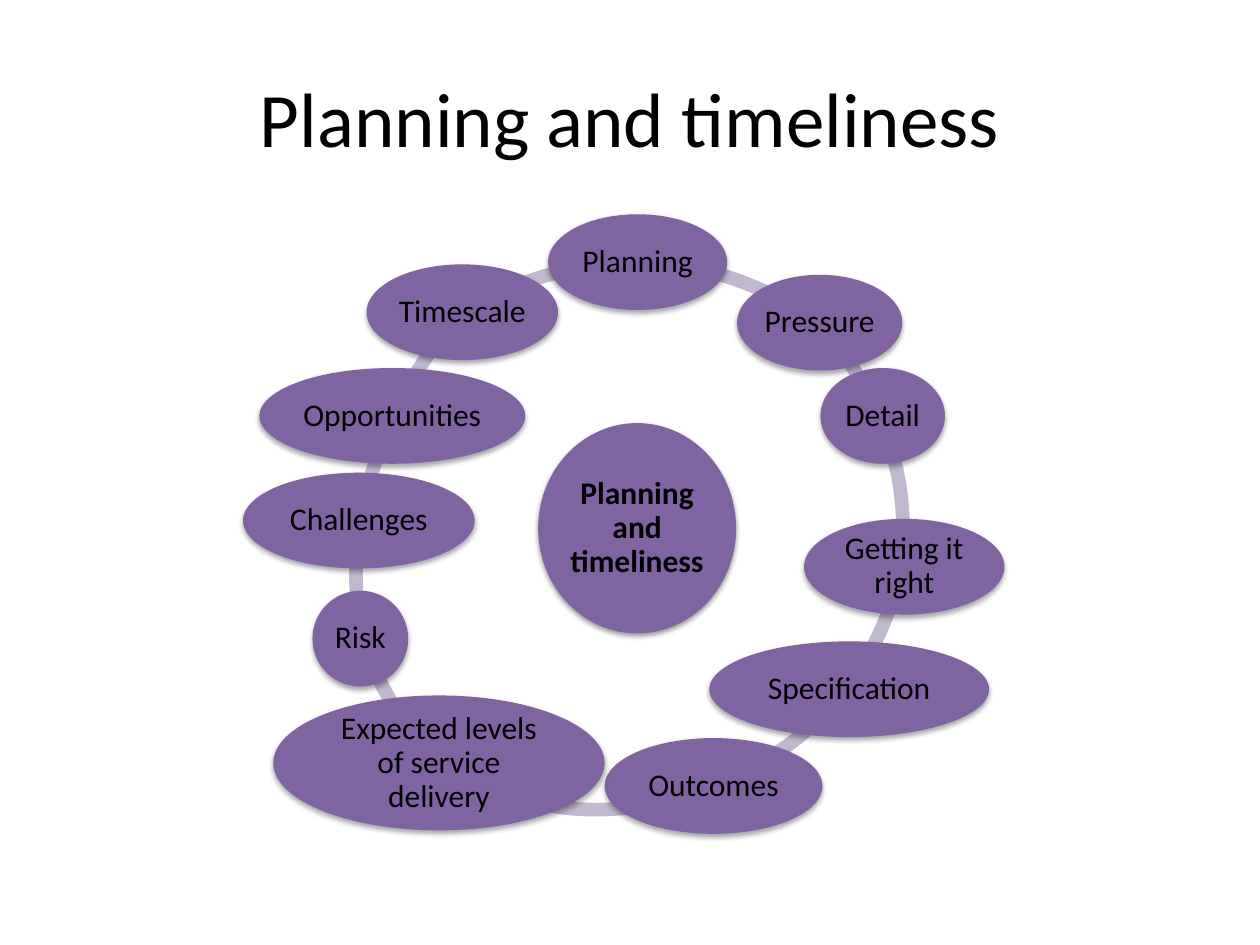
from dataclasses import dataclass
from typing import Any

from lxml import etree
from pptx import Presentation
from pptx.dml.color import RGBColor
from pptx.enum.shapes import MSO_SHAPE
from pptx.enum.text import MSO_ANCHOR, PP_ALIGN
from pptx.oxml.ns import qn
from pptx.util import Cm, Pt

ELLIPSE = MSO_SHAPE.OVAL
BLOCK_ARC = MSO_SHAPE.BLOCK_ARC
CENTER = PP_ALIGN.CENTER
MIDDLE = MSO_ANCHOR.MIDDLE

TITLE_ONLY = 5
RING_DIAMETER = 11
RING_THICKNESS = 0.025
TOPIC_HEIGHT = 1.93

# Ring segments: left, top (cm), start and end angle (degrees, clockwise)
RING = [
    (6.99, 5.21, 234.44, 273.99),
    (7.49, 4.78, 200.36, 227.24),
    (7.14, 5.56, 186.23, 209.69),
    (7.04, 6.12, 166.53, 192.06),
    (6.96, 5.84, 131.96, 163.53),
    (6.5, 5.46, 64, 125.63),
    (7.24, 5.18, 36.23, 72.41),
    (7.37, 5, 9.68, 38.55),
    (7.34, 5.13, 335.46, 8.18),
    (7.24, 4.9, 313.87, 338.2),
    (7.59, 5.21, 267.36, 308.92),
]

# Topics clockwise from the top: text, left, top, width, height (cm)
TOPICS = [
    ("Planning", 11.05, 4.32, 3.61, TOPIC_HEIGHT),
    ("Pressure", 14.86, 5.54, 3.33, TOPIC_HEIGHT),
    ("Detail", 16.54, 7.42, 2.51, TOPIC_HEIGHT),
    ("Getting it right", 16.21, 10.46, 4.04, TOPIC_HEIGHT),
    ("Specification", 14.3, 12.93, 5.64, TOPIC_HEIGHT),
    ("Outcomes", 12.19, 14.88, 4.39, TOPIC_HEIGHT),
    ("Expected levels of service delivery", 5.51, 14.02, 6.68, 2.72),
    ("Risk", 6.3, 11.91, 1.93, TOPIC_HEIGHT),
    ("Challenges", 4.9, 9.53, 4.67, TOPIC_HEIGHT),
    ("Opportunities", 5.23, 7.42, 5.36, TOPIC_HEIGHT),
    ("Timescale", 7.39, 5.33, 3.86, TOPIC_HEIGHT),
]


def color(value):
    return RGBColor.from_string(value)


def write_text(frame, text, *, font, size, fill, bold=False, line_spacing=None,
               space_after=None, margin=None):
    frame.word_wrap = True
    frame.vertical_anchor = MIDDLE
    if margin is not None:
        frame.margin_left = frame.margin_right = Cm(margin)
        frame.margin_top = frame.margin_bottom = Cm(margin)
    paragraph = frame.paragraphs[0]
    paragraph.alignment = CENTER
    if line_spacing is not None:
        paragraph.line_spacing = line_spacing
    if space_after is not None:
        paragraph.space_after = Pt(space_after)
    run = paragraph.add_run()
    run.text = text
    run.font.name = font
    run.font.size = Pt(size)
    run.font.bold = bold
    run.font.color.rgb = color(fill)


def add_shadow(shape, opacity, distance):
    effects = shape.element.spPr.find(qn("a:effectLst"))
    shadow = etree.SubElement(
        effects, qn("a:outerShdw"), blurRad=str(Pt(3.1)), dist=str(Pt(distance)),
        dir="5400000", rotWithShape="0")
    black = etree.SubElement(shadow, qn("a:srgbClr"), val="000000")
    etree.SubElement(black, qn("a:alpha"), val=str(opacity * 1000))


@dataclass
class CycleSlide:
    slide: Any
    font: str = "Calibri"
    ink: str = "000000"
    bubble_fill: str = "8064A2"
    ring_fill: str = "C0B8CE"

    def title(self, text, left, top, width, height):
        shape = self.slide.shapes.title
        shape.left, shape.top = Cm(left), Cm(top)
        shape.width, shape.height = Cm(width), Cm(height)
        write_text(shape.text_frame, text, font=self.font, size=44, fill=self.ink)

    def shape(self, kind, left, top, width, height, fill):
        shape = self.slide.shapes.add_shape(
            kind, Cm(left), Cm(top), Cm(width), Cm(height))
        shape.shadow.inherit = False
        shape.fill.solid()
        shape.fill.fore_color.rgb = color(fill)
        shape.line.fill.background()
        return shape

    def ring_segment(self, left, top, start, end):
        arc = self.shape(BLOCK_ARC, left, top, RING_DIAMETER, RING_DIAMETER,
                         self.ring_fill)
        # Angles are stored in 1/60000 degree, adjustments in 1/100000
        arc.adjustments[0] = start * 0.6
        arc.adjustments[1] = end * 0.6
        arc.adjustments[2] = RING_THICKNESS

    def bubble(self, text, left, top, width, height, bold=False,
               opacity=35, distance=1.8):
        ellipse = self.shape(ELLIPSE, left, top, width, height, self.bubble_fill)
        add_shadow(ellipse, opacity, distance)
        write_text(ellipse.text_frame, text, font=self.font, size=18,
                   fill=self.ink, bold=bold, line_spacing=0.9,
                   space_after=6.3, margin=0.06)


def main():
    presentation = Presentation()
    presentation.slide_width, presentation.slide_height = Cm(25.4), Cm(19.05)
    layout = presentation.slide_layouts[TITLE_ONLY]
    cycle = CycleSlide(presentation.slides.add_slide(layout))

    # Title
    cycle.title("Planning and timeliness", 1.27, 0.76, 22.86, 3.18)

    # Ring behind the topics
    for segment in RING:
        cycle.ring_segment(*segment)

    # Centre and surrounding topics
    cycle.bubble("Planning and timeliness", 10.85, 8.53, 3.99, 4.24,
                 bold=True, opacity=38, distance=1.6)
    for topic in TOPICS:
        cycle.bubble(*topic)

    presentation.save("out.pptx")


if __name__ == "__main__":
    main()
